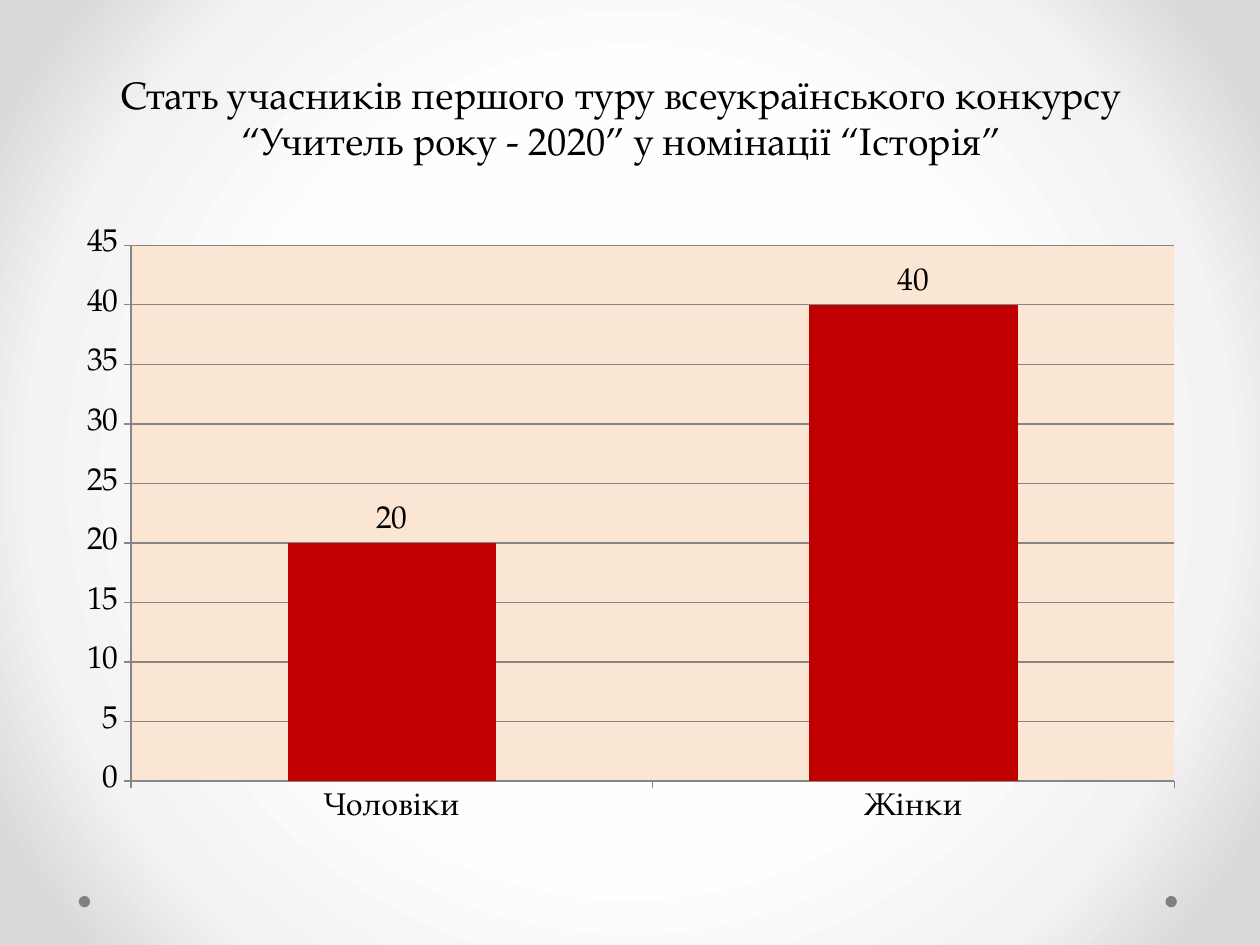
from lxml import etree
from pptx import Presentation
from pptx.chart.data import CategoryChartData
from pptx.dml.color import RGBColor
from pptx.enum.chart import XL_CHART_TYPE, XL_LABEL_POSITION, XL_TICK_MARK
from pptx.enum.shapes import MSO_SHAPE
from pptx.enum.text import MSO_ANCHOR, PP_ALIGN
from pptx.oxml import parse_xml
from pptx.oxml.ns import nsdecls, qn
from pptx.util import Pt

COLUMNS = XL_CHART_TYPE.COLUMN_CLUSTERED
ABOVE_BAR = XL_LABEL_POSITION.OUTSIDE_END
TICK_OUT = XL_TICK_MARK.OUTSIDE
OVAL = MSO_SHAPE.OVAL
BOTTOM = MSO_ANCHOR.BOTTOM
CENTER = PP_ALIGN.CENTER

BLACK = RGBColor(0x00, 0x00, 0x00)
GRAY = RGBColor(0x80, 0x80, 0x80)
AXIS_GRAY = RGBColor(0x86, 0x86, 0x86)
RED = RGBColor(0xC0, 0x00, 0x00)
PEACH = RGBColor(0xFA, 0xE6, 0xD3)
GLOW = (
    (50, RGBColor(0xFF, 0xFE, 0xFF)),
    (76, RGBColor(0xF4, 0xF2, 0xF4)),
    (92, RGBColor(0xDB, 0xD9, 0xDB)),
)
FONT = "TeX Gyre Pagella"


def apply_format(target, values):
    for name, value in values.items():
        setattr(target, name, value)


class SlideBuilder:
    def __init__(self, slide, font_name, text_color):
        self.slide = slide
        self.font_name = font_name
        self.text_color = text_color

    def style_font(self, font, size):
        apply_format(font, {"name": self.font_name, "size": Pt(size), "bold": False})
        font.color.rgb = self.text_color

    def background(self, glow):
        self.slide.background.fill.gradient()
        gradient = next(self.slide.element.iter(qn("a:gradFill")))
        stops = "".join(
            f'<a:gs pos="{percent * 1000}"><a:srgbClr val="{color}"/></a:gs>'
            for percent, color in glow
        )
        radial = parse_xml(
            f'<a:gradFill {nsdecls("a")} rotWithShape="1"><a:gsLst>{stops}</a:gsLst>'
            '<a:path path="circle"><a:fillToRect l="50000" t="50000" '
            'r="50000" b="50000"/></a:path></a:gradFill>'
        )
        gradient.getparent().replace(gradient, radial)

    def dot(self, left, top, diameter, color):
        dot = self.slide.shapes.add_shape(
            OVAL, Pt(left), Pt(top), Pt(diameter), Pt(diameter)
        )
        dot.shadow.inherit = False
        dot.fill.solid()
        dot.fill.fore_color.rgb = color
        dot.line.fill.background()

    def title(self, text, box, size):
        frame = self.slide.shapes.add_textbox(*map(Pt, box)).text_frame
        apply_format(frame, {"word_wrap": True, "vertical_anchor": BOTTOM})
        heading = frame.paragraphs[0]
        apply_format(heading, {"text": text, "alignment": CENTER})
        self.style_font(heading.runs[0].font, size)

    def column_chart(self, counts, box, size, bar_color, plot_color):
        data = CategoryChartData()
        data.categories = counts.keys()
        data.add_series("Series 1", counts.values())
        chart = self.slide.shapes.add_chart(COLUMNS, *map(Pt, box), data).chart
        apply_format(chart, {"has_legend": False, "has_title": False})
        self.style_font(chart.font, size)

        bars = chart.plots[0]
        apply_format(
            bars,
            {"gap_width": 150, "vary_by_categories": False, "has_data_labels": True},
        )
        apply_format(bars.data_labels, {"show_value": True, "position": ABOVE_BAR})
        self.style_font(bars.data_labels.font, size)
        bar_fill = bars.series[0].format.fill
        bar_fill.solid()
        bar_fill.fore_color.rgb = bar_color

        for axis in (chart.category_axis, chart.value_axis):
            axis.major_tick_mark = TICK_OUT
            self.style_axis_line(axis.format.line)
        apply_format(
            chart.value_axis,
            {"minimum_scale": 0, "maximum_scale": 45, "major_unit": 5},
        )
        self.style_axis_line(chart.value_axis.major_gridlines.format.line)
        self.frame_plot(chart, plot_color)

    def style_axis_line(self, line):
        line.color.rgb = AXIS_GRAY
        line.width = Pt(0.75)

    def frame_plot(self, chart, color):
        area = next(chart.element.iter(qn("c:plotArea")))
        for layout in area.findall(qn("c:layout")):
            area.remove(layout)
        layout = etree.Element(qn("c:layout"))
        manual = etree.SubElement(layout, qn("c:manualLayout"))
        settings = {
            "layoutTarget": "inner", "xMode": "edge", "yMode": "edge",
            "x": 0.06, "y": 0.04, "w": 0.92, "h": 0.86,
        }
        for name, value in settings.items():
            etree.SubElement(manual, qn(f"c:{name}"), val=str(value))
        area.insert(0, layout)
        area.append(parse_xml(
            f'<c:spPr {nsdecls("c", "a")}><a:solidFill>'
            f'<a:srgbClr val="{color}"/></a:solidFill></c:spPr>'
        ))


def main():
    deck = Presentation()
    apply_format(deck, {"slide_width": Pt(720), "slide_height": Pt(540)})
    builder = SlideBuilder(deck.slides.add_slide(deck.slide_layouts[6]), FONT, BLACK)
    builder.background(GLOW)
    for left in (666, 45):
        builder.dot(left, 512, 6.5, GRAY)
    builder.title(
        "Стать учасників першого туру всеукраїнського конкурсу "
        "“Учитель року - 2020” у номінації “Історія”",
        (31, 26, 648, 71),
        22,
    )
    participants = {"Чоловіки": 20, "Жінки": 40}
    builder.column_chart(participants, (36, 126, 648, 356), 18, RED, PEACH)
    deck.save("out.pptx")


if __name__ == "__main__":
    main()
